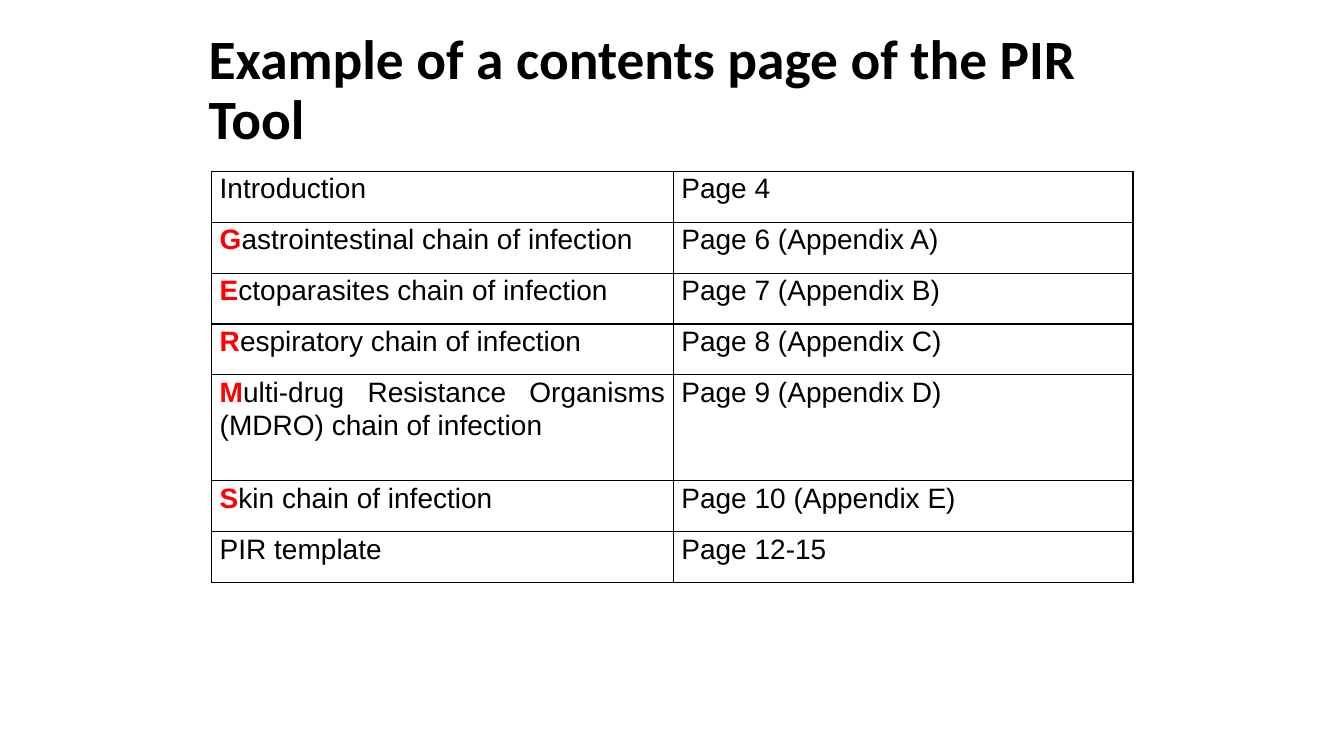
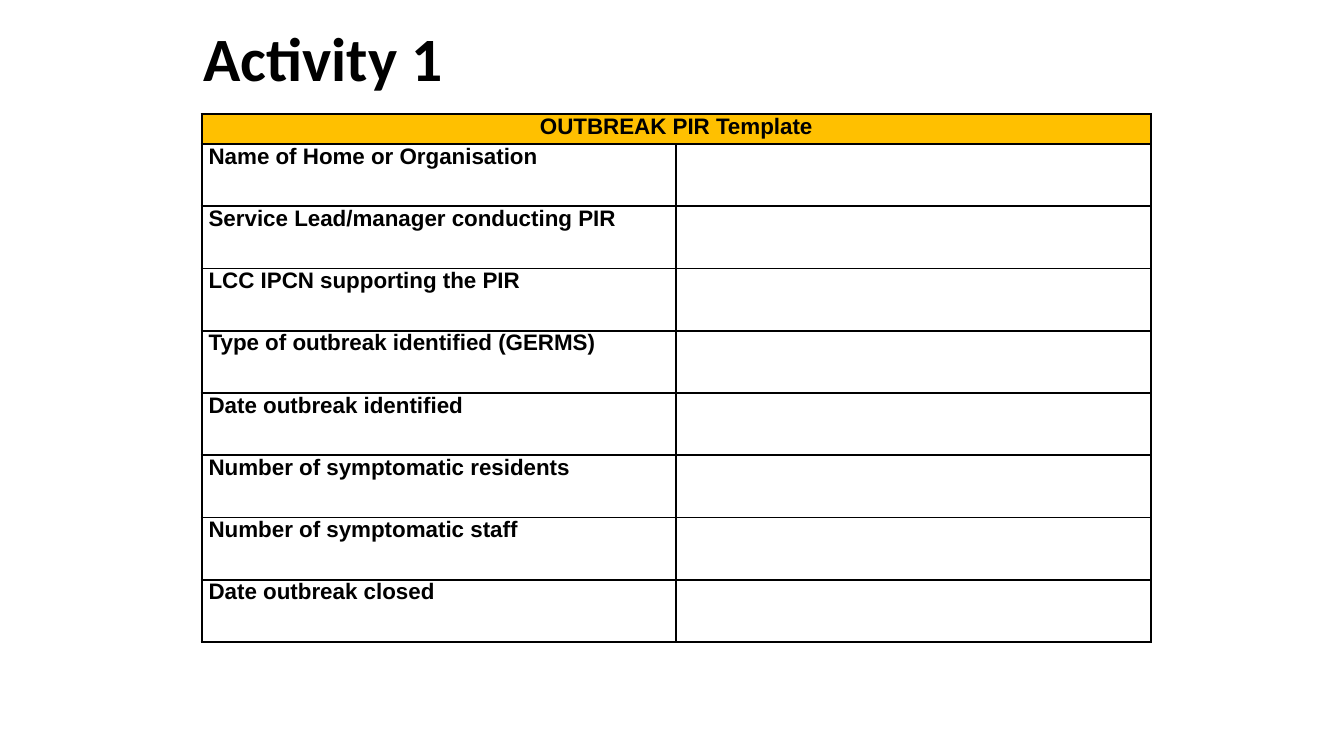
from dataclasses import dataclass
from typing import NamedTuple

from lxml.etree import fromstring
from pptx import Presentation
from pptx.dml.color import RGBColor
from pptx.enum.text import MSO_ANCHOR, MSO_AUTO_SIZE, PP_ALIGN
from pptx.oxml.ns import nsdecls
from pptx.slide import Slide
from pptx.table import Table, _Cell
from pptx.util import Emu, Inches, Pt


@dataclass(frozen=True)
class Theme:
    ink: str = "000000"
    hot: str = "FF0000"
    band: str = "FFC000"
    head: str = "Calibri"
    body: str = "Arial"
    list_size: float = 20
    form_size: float = 16
    gap: float = 6


class Box(NamedTuple):
    col: float
    row: float
    wide: float
    high: float


class Run(NamedTuple):
    text: str
    bold: bool = False
    color: str = Theme.ink


class Style(NamedTuple):
    size: float
    inset: float
    line: float
    lead: float


class Entry(NamedTuple):
    mark: str
    label: str
    page: str


THEME = Theme()
COL = Inches(1 / 3)
ROW = Inches(0.25)
COLS, ROWS = 40, 30

LIST = Style(THEME.list_size, 0.08, 1, 1.07)
FORM = Style(THEME.form_size, 0.07, 1.5, 1)

ENTRIES = [
    Entry("", "Introduction", "4"),
    Entry("G", "astrointestinal chain of infection", "6 (Appendix A)"),
    Entry("E", "ctoparasites chain of infection", "7 (Appendix B)"),
    Entry("R", "espiratory chain of infection", "8 (Appendix C)"),
    Entry("M", "ulti-drug Resistance Organisms (MDRO) chain of infection",
          "9 (Appendix D)"),
    Entry("S", "kin chain of infection", "10 (Appendix E)"),
    Entry("", "PIR template", "12-15"),
]

FIELDS = [
    "Name of Home or Organisation",
    "Service Lead/manager conducting PIR",
    "LCC IPCN supporting the PIR",
    "Type of outbreak identified (GERMS)",
    "Date outbreak identified",
    "Number of symptomatic residents",
    "Number of symptomatic staff",
    "Date outbreak closed",
]


def across(count: float) -> Emu:
    return Emu(round(count * COL))


def down(count: float) -> Emu:
    return Emu(round(count * ROW))


def write(para, run: Run, font: str, size: float) -> None:
    part = para.add_run()
    part.text = run.text
    part.font.name = font
    part.font.size = Pt(size)
    part.font.bold = run.bold
    part.font.color.rgb = RGBColor.from_string(run.color)


def title(slide: Slide, text: str, box: Box, size: float) -> None:
    shape = slide.shapes.title
    shape.left, shape.top = across(box.col), down(box.row)
    shape.width, shape.height = across(box.wide), down(box.high)
    frame = shape.text_frame
    frame.word_wrap = True
    frame.auto_size = MSO_AUTO_SIZE.NONE
    frame.vertical_anchor = MSO_ANCHOR.MIDDLE
    para = frame.paragraphs[0]
    para.alignment = PP_ALIGN.LEFT
    para.line_spacing = 0.9
    write(para, Run(text, True), THEME.head, size)


def border(cell: _Cell, width: float) -> None:
    props = cell._tc.get_or_add_tcPr()
    for spot, side in enumerate("LRTB"):
        props.insert(spot, fromstring(
            f'<a:ln{side} {nsdecls("a")} w="{Pt(width)}"><a:solidFill>'
            f'<a:srgbClr val="{THEME.ink}"/></a:solidFill></a:ln{side}>'))


def grid(slide: Slide, col: float, row: float, wides: list[float],
         highs: list[float], style: Style) -> Table:
    table = slide.shapes.add_table(
        len(highs), len(wides), across(col), down(row),
        across(sum(wides)), down(sum(highs))).table
    table.first_row = table.horz_banding = False
    for part, wide in zip(table.columns, wides):
        part.width = across(wide)
    for part, high in zip(table.rows, highs):
        part.height = down(high)
    for cell in table.iter_cells():
        cell.margin_left = cell.margin_right = Inches(style.inset)
        cell.margin_top = cell.margin_bottom = 0
        cell.fill.background()
        border(cell, style.line)
    return table


def fill(cell: _Cell, runs: list[Run], style: Style,
         align: PP_ALIGN = PP_ALIGN.JUSTIFY) -> None:
    para = cell.text_frame.paragraphs[0]
    para.alignment = align
    para.line_spacing = style.lead
    para.space_after = Pt(THEME.gap)
    for run in runs:
        write(para, run, THEME.body, style.size)


def contents(slide: Slide) -> None:
    title(slide, "Example of a contents page of the PIR Tool",
          Box(5.91, 1.12, 28.17, 5.04), 39.6)
    highs = [4.2 if entry.mark == "M" else 2.02 for entry in ENTRIES]
    table = grid(slide, 6.3, 6.8, [13.74, 13.68], highs, LIST)
    for row, entry in enumerate(ENTRIES):
        runs = [Run(entry.mark, True, THEME.hot)] if entry.mark else []
        fill(table.cell(row, 0), runs + [Run(entry.label)], LIST)
        fill(table.cell(row, 1), [Run(f"Page {entry.page}")], LIST)


def activity(slide: Slide) -> None:
    title(slide, "Activity 1", Box(5.76, 0.36, 28.17, 4.16), 44)
    highs = [1.2] + [2.47] * len(FIELDS)
    table = grid(slide, 6, 4.52, [14.13] * 2, highs, FORM)
    top = table.cell(0, 0)
    top.merge(table.cell(0, 1))
    top.fill.solid()
    top.fill.fore_color.rgb = RGBColor.from_string(THEME.band)
    fill(top, [Run("OUTBREAK PIR Template", True)], FORM, PP_ALIGN.CENTER)
    for row, field in enumerate(FIELDS, 1):
        fill(table.cell(row, 0), [Run(field, True)], FORM)


def main() -> None:
    deck = Presentation()
    deck.slide_width, deck.slide_height = across(COLS), down(ROWS)
    for draw in (contents, activity):
        draw(deck.slides.add_slide(deck.slide_layouts[5]))
    deck.save("out.pptx")


if __name__ == "__main__":
    main()
